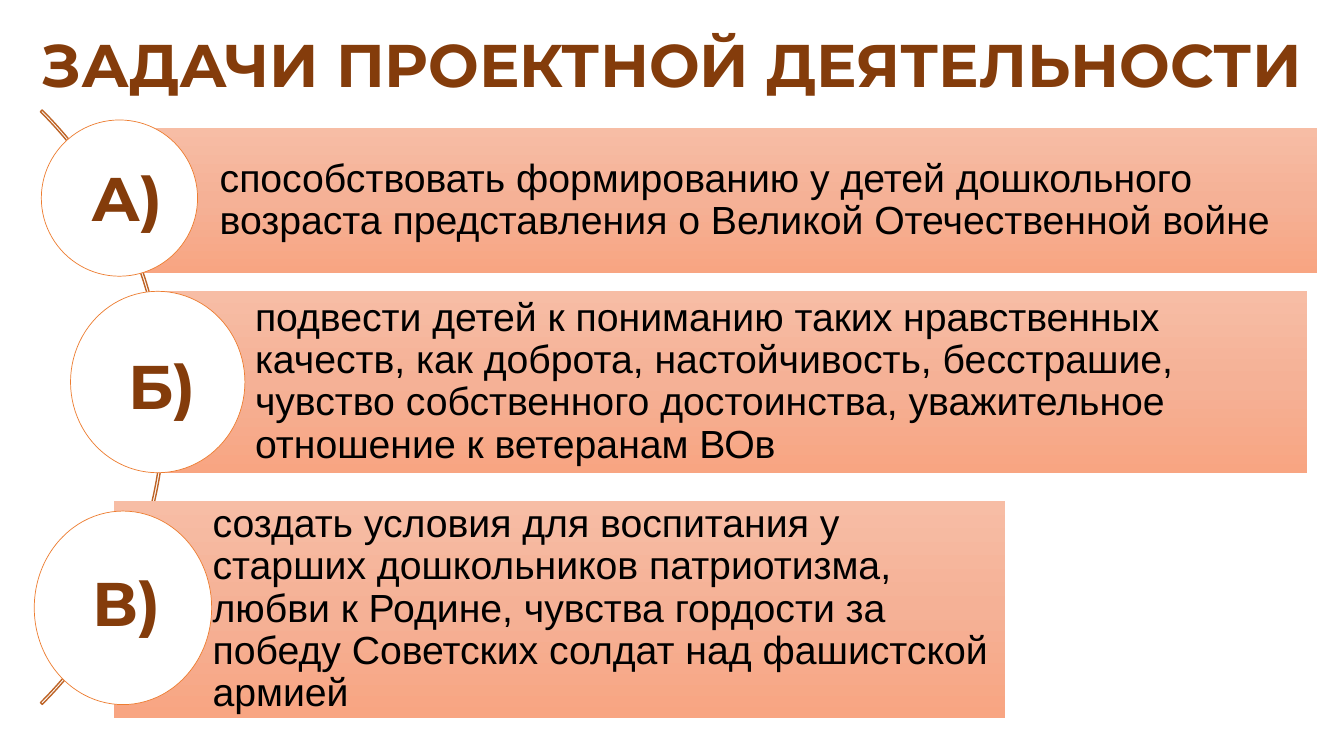
import copy
from dataclasses import dataclass
from typing import Any

import lxml.etree
import pptx
import pptx.dml.color
import pptx.enum.shapes
import pptx.enum.text
import pptx.oxml.ns
import pptx.util

EMU_PER_PX = 9144  # 100 px to the inch
BROWN = "843C0B"
ORANGE = "ED7D31"
BAR_GRADIENT = {0: "F7BDA5", 0.5: "F5B196", 1: "F8A582"}
SHAPES = pptx.enum.shapes.MSO_SHAPE
ANCHOR = pptx.enum.text.MSO_ANCHOR
ALIGN = pptx.enum.text.PP_ALIGN


@dataclass
class Box:
    left: int
    top: int
    width: int
    height: int


@dataclass
class Task:
    letter: str
    text: str
    bar: Box
    circle: Box
    label: Box


TASKS = [
    Task("А)", "способствовать формированию у детей дошкольного возраста "
         "представления о Великой Отечественной войне",
         Box(120, 127, 1187, 144), Box(41, 119, 155, 155), Box(79, 154, 94, 84)),
    Task("Б)", "подвести детей к пониманию таких нравственных качеств, как доброта, "
         "настойчивость, бесстрашие, чувство собственного достоинства, "
         "уважительное отношение к ветеранам ВОв",
         Box(155, 289, 1142, 180), Box(70, 289, 173, 180), Box(114, 340, 94, 84)),
    Task("В)", "создать условия для воспитания у старших дошкольников патриотизма, "
         "любви к Родине, чувства гордости за победу Советских солдат "
         "над фашистской армией",
         Box(113, 497, 884, 215), Box(34, 507, 176, 192), Box(79, 556, 94, 84)),
]


def px(length: int) -> int:
    return length * EMU_PER_PX


def color(value: str) -> pptx.dml.color.RGBColor:
    return pptx.dml.color.RGBColor.from_string(value)


def apply_format(target: Any, values: dict[str, Any]) -> None:
    for name, value in values.items():
        setattr(target, name, value)


def place(box: Box) -> tuple[int, int, int, int]:
    return px(box.left), px(box.top), px(box.width), px(box.height)


def add_shape(slide: Any, kind: Any, box: Box, line: str = "", points: float = 0) -> Any:
    shape = slide.shapes.add_shape(kind, *place(box))
    shape.shadow.inherit = False
    if line:
        shape.line.color.rgb = color(line)
        shape.line.width = pptx.util.Pt(points)
    else:
        shape.line.fill.background()
    return shape


def fill_gradient(shape: Any, stops: dict[float, str]) -> None:
    shape.fill.gradient()
    shape.fill.gradient_angle = 270
    stop_list = shape._element.xpath(".//a:gsLst")[0]
    stop_list.insert(1, copy.deepcopy(stop_list[0]))
    for stop, (position, value) in zip(shape.fill.gradient_stops, stops.items()):
        stop.color.rgb = color(value)
        stop.position = position


def add_bar(slide: Any, box: Box, text: str) -> None:
    bar = add_shape(slide, SHAPES.RECTANGLE, box)
    fill_gradient(bar, BAR_GRADIENT)
    apply_format(bar.text_frame, {
        "word_wrap": True, "vertical_anchor": ANCHOR.MIDDLE, "margin_left": px(98),
        "margin_right": px(8), "margin_top": px(8), "margin_bottom": px(8)})
    paragraph = bar.text_frame.paragraphs[0]
    apply_format(paragraph, {"alignment": ALIGN.LEFT, "line_spacing": 0.9})
    run = paragraph.add_run()
    run.text = text
    apply_format(run.font, {"name": "Arial", "size": pptx.util.Pt(28)})
    run.font.color.rgb = color("000000")


def add_heading(slide: Any, box: Box, text: str, points: int) -> None:
    frame = slide.shapes.add_textbox(*place(box)).text_frame
    apply_format(frame, {"word_wrap": True,
                         "auto_size": pptx.enum.text.MSO_AUTO_SIZE.SHAPE_TO_FIT_TEXT})
    paragraph = frame.paragraphs[0]
    paragraph.alignment = ALIGN.CENTER
    run = paragraph.add_run()
    run.text = text
    apply_format(run.font, {"name": "Montserrat", "size": pptx.util.Pt(points), "bold": True})
    run.font.color.rgb = color(BROWN)
    # White outline around the letters
    qn = pptx.oxml.ns.qn
    outline = lxml.etree.Element(qn("a:ln"), w=str(pptx.util.Pt(0.75)))
    fill = lxml.etree.SubElement(outline, qn("a:solidFill"))
    lxml.etree.SubElement(fill, qn("a:srgbClr"), val="FFFFFF")
    run._r.get_or_add_rPr().insert(0, outline)


def main() -> None:
    presentation = pptx.Presentation()
    presentation.slide_width = pptx.util.Inches(13.333)
    presentation.slide_height = pptx.util.Inches(7.5)
    slide = presentation.slides.add_slide(presentation.slide_layouts[6])

    # Arc that links the circles
    arc = add_shape(slide, SHAPES.BLOCK_ARC, Box(-670, -13, 834, 834), "BE6427", 1)
    arc.fill.background()
    for index, value in enumerate((189, 27, 0.003)):
        arc.adjustments[index] = value

    # Bars with their circles
    for task in TASKS:
        add_bar(slide, task.bar, task.text)
        circle = add_shape(slide, SHAPES.OVAL, task.circle, ORANGE, 0.5)
        circle.fill.solid()
        circle.fill.fore_color.rgb = color("FFFFFF")

    # Title and letters
    add_heading(slide, Box(0, 22, 1333, 82), "ЗАДАЧИ ПРОЕКТНОЙ ДЕЯТЕЛЬНОСТИ", 43)
    for task in TASKS:
        add_heading(slide, task.label, task.letter, 44)

    presentation.save("out.pptx")


if __name__ == "__main__":
    main()
